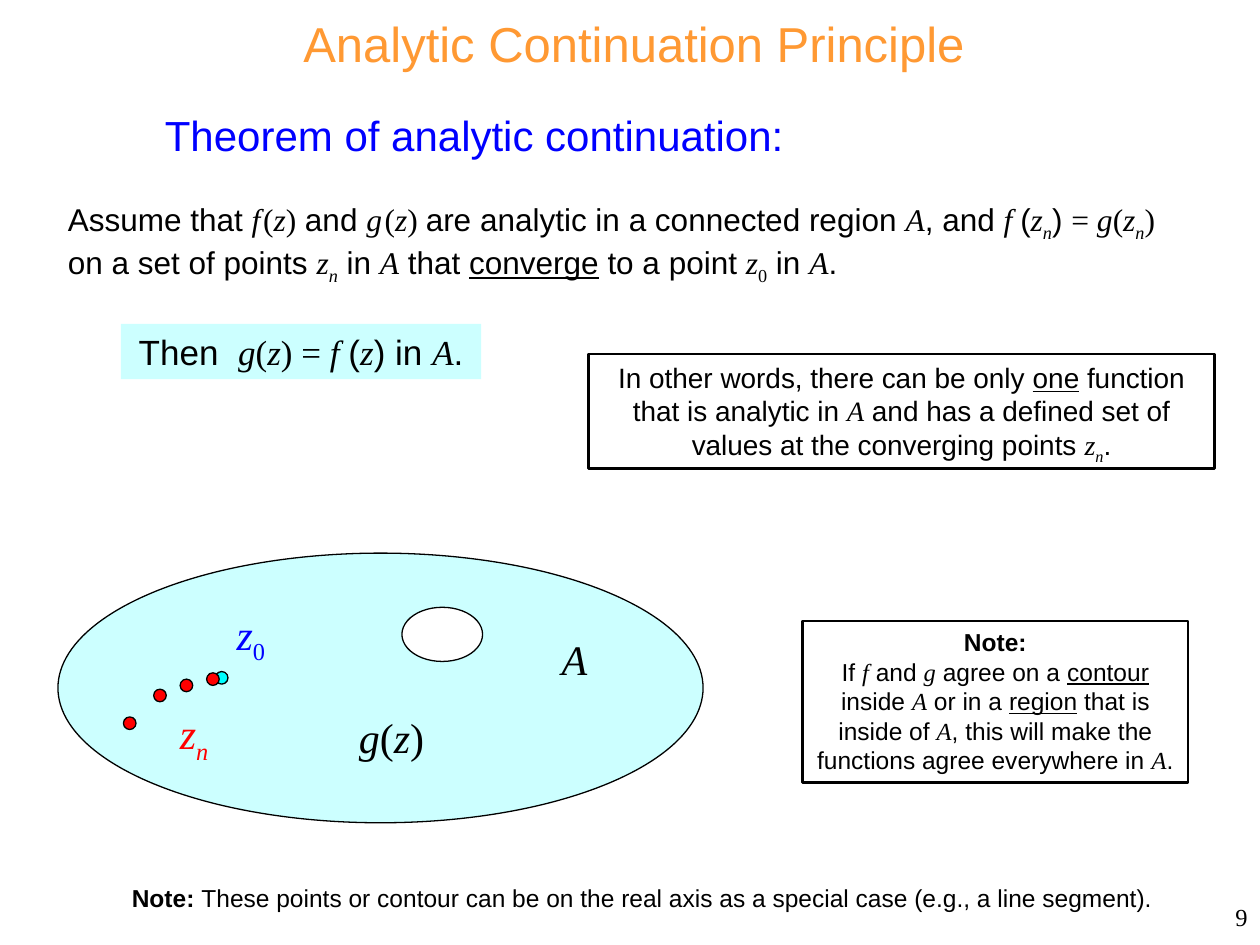
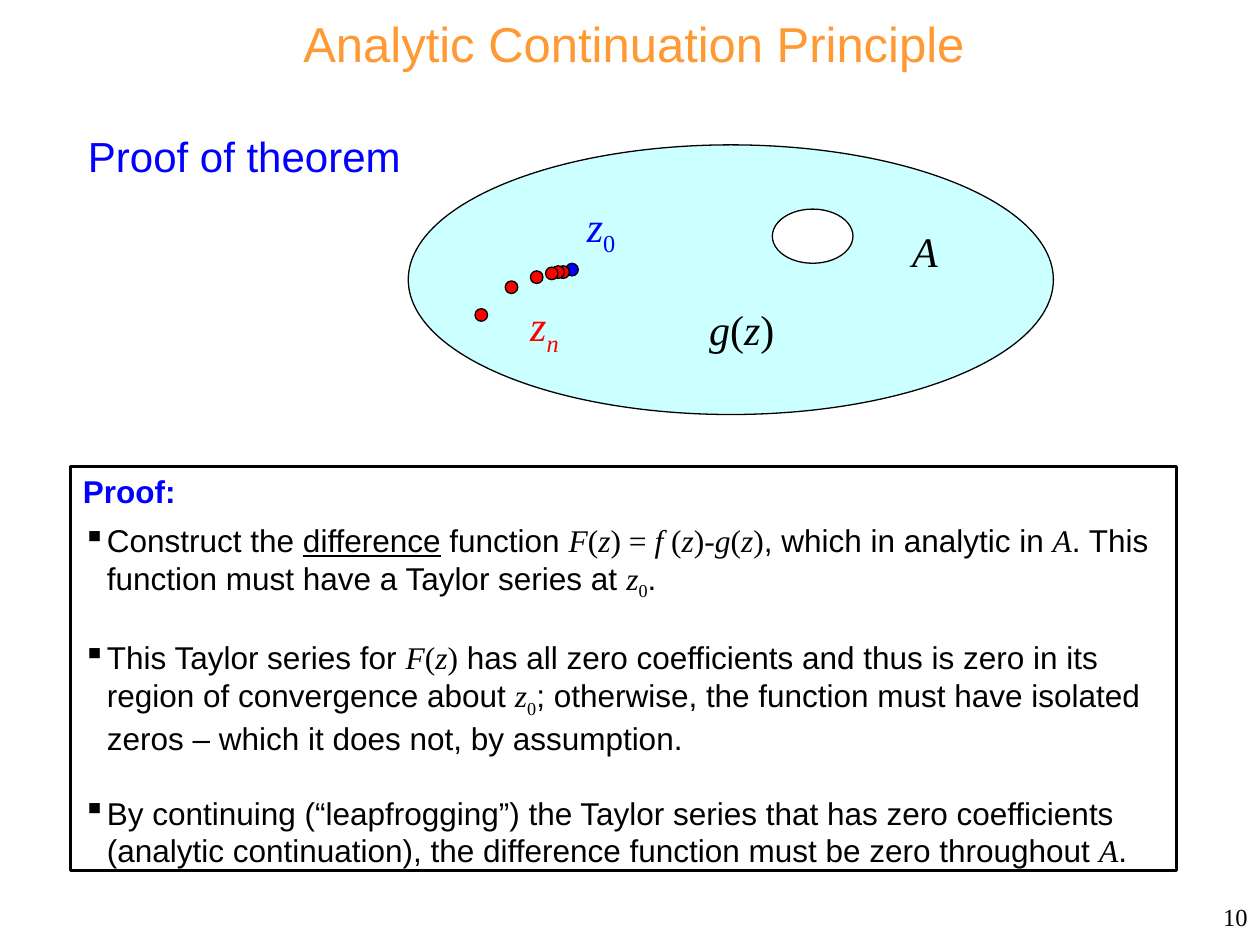
import itertools
import lxml.etree
import pptx
import pptx.dml.color
import pptx.enum.shapes
import pptx.enum.text
import pptx.oxml.ns
import pptx.util

CELL = pptx.util.Inches(0.1)
COLS, ROWS = 100, 75
SANS, SERIF = "Arial", "Times New Roman"
BLACK, WHITE, BLUE, RED = "000000", "FFFFFF", "0000FF", "FF0000"
PALE, CYAN, GOLD = "CCFFFF", "00FFFF", "FF9933"
MATH, UNDER, BOLD, THIN = "$~^`"
LEFT = pptx.enum.text.PP_ALIGN.LEFT
MID = pptx.enum.text.PP_ALIGN.CENTER
RIGHT = pptx.enum.text.PP_ALIGN.RIGHT
RECT = pptx.enum.shapes.MSO_SHAPE.RECTANGLE
OVAL = pptx.enum.shapes.MSO_SHAPE.OVAL


def rgb(code):
    """Turn a hex string into a colour."""
    return pptx.dml.color.RGBColor.from_string(code)


def grid(*spans):
    """Turn columns and rows of the slide grid into lengths."""
    return [round(span * CELL) for span in spans]


def parse(text):
    """Yield each shown character with its mode, subscript and thin flags."""
    mode, sub = "", False
    for char in text:
        if char in (MATH, UNDER, BOLD):
            mode = "" if mode == char else char
        elif mode == MATH and char == "_":
            sub = True
        else:
            thin = char == THIN
            slant = mode == MATH and char.isalpha()
            yield " " if thin else char, (mode, slant, sub, thin)
            sub = False


def write(para, text, size, color=BLACK, align=LEFT):
    """Fill a paragraph from text marked for math, underline and bold."""
    para.alignment = align
    for style, group in itertools.groupby(parse(text), lambda pair: pair[1]):
        mode, slant, sub, thin = style
        run = para.add_run()
        run.text = "".join(char for char, _ in group)
        font = run.font
        font.name = SERIF if mode == MATH else SANS
        font.size = pptx.util.Pt(6 if thin else size)
        font.color.rgb = rgb(color)
        font.italic, font.bold = slant, mode == BOLD
        font.underline = mode == UNDER
        if sub:
            font._element.set("baseline", "-25000")


def fill_text(shape, lines, size, color=BLACK, align=LEFT, wrap=True):
    """Write one paragraph per line, from the top of a shape."""
    frame = shape.text_frame
    frame.word_wrap = wrap
    frame.vertical_anchor = pptx.enum.text.MSO_ANCHOR.TOP
    for row, line in enumerate(lines):
        para = frame.add_paragraph() if row else frame.paragraphs[0]
        write(para, line, size, color, align)
    return frame


def add_text(shapes, place, text, size, color=BLACK, align=LEFT, wrap=False):
    """Add a text box with a single paragraph."""
    box = shapes.add_textbox(*grid(*place))
    fill_text(box, [text], size, color, align, wrap)


def add_form(shapes, kind, place, fill=None, line=None):
    """Add a flat preset shape with an optional fill and black line."""
    form = shapes.add_shape(kind, *grid(*place))
    form.shadow.inherit = False
    if fill:
        form.fill.solid()
        form.fill.fore_color.rgb = rgb(fill)
    else:
        form.fill.background()
    if line:
        form.line.color.rgb = rgb(BLACK)
        form.line.width = pptx.util.Pt(line)
    else:
        form.line.fill.background()
    return form


def add_box(slide, place, lines, size, fill=None, line=1.5):
    """Add a box of centred text."""
    box = add_form(slide.shapes, RECT, place, fill, line)
    fill_text(box, lines, size, align=MID)


def add_bullet(para):
    """Give a paragraph a square bullet and a hanging indent."""
    props = para._p.get_or_add_pPr()
    dent = pptx.util.Inches(0.19)
    props.set("marL", str(dent))
    props.set("indent", str(-dent))
    mark = lxml.etree.SubElement(props, pptx.oxml.ns.qn("a:buChar"))
    mark.set("char", "▪")


def add_region(slide, left, top, hole, dots, goal):
    """Draw region A with its hole, its limit point and its points."""
    shapes = slide.shapes.add_group_shape().shapes
    add_form(shapes, OVAL, (left, top, 51.2, 21.4), PALE, 0.75)
    add_form(shapes, OVAL, (left + hole[0], top + hole[1], 6.4, 4.3), WHITE, 0.75)
    points = [(12.5, 9.4, goal)] + [(col, row, RED) for col, row in dots]
    for col, row, color in points:
        add_form(shapes, OVAL, (left + col, top + row, 1, 1), color, 0.75)
    labels = [("$A$", 39, 5.9, 4, BLACK), ("$z_0$", 13.2, 3.9, 4.4, BLUE),
              ("$g(z)$", 22.9, 12.1, 7.2, BLACK), ("$z_n$", 8.7, 11.8, 4.4, RED)]
    for text, col, row, wide, color in labels:
        add_text(shapes, (left + col, top + row, wide, 5), text, 24, color)


def add_page(deck, number):
    """Add a slide with the shared title and its page number."""
    slide = deck.slides.add_slide(deck.slide_layouts[5])
    title = slide.shapes.title
    title.left, title.top, title.width, title.height = grid(14.9, 0, 70.8, 6.8)
    frame = title.text_frame
    frame.vertical_anchor = pptx.enum.text.MSO_ANCHOR.MIDDLE
    write(frame.paragraphs[0], "Analytic Continuation Principle", 28, GOLD, MID)
    add_text(slide.shapes, (COLS - 20.8, ROWS - 3.9, 20.8, 3.9),
             f"${number}$", 14, align=RIGHT, wrap=True)
    return slide


def add_claim(deck):
    """Build the slide that states the theorem."""
    slide = add_page(deck, 9)
    shapes = slide.shapes
    add_text(shapes, (12.1, 8.2, 52.8, 5.1),
             "Theorem of analytic continuation:", 24, BLUE)
    add_text(shapes, (4.4, 15.4, 89.9, 7.1),
             "Assume that $f`(z)$ and $g`(z) $are analytic in a connected region $A$, "
             "and $f $($z_n$) $= g(z_n)$ on a set of points $z_n$ in $A$ that "
             "~converge~ to a point $z_0$ in $A$.", 18, wrap=True)
    add_box(slide, (9.6, 25.7, 28.6, 4.4),
            ["Then  $g(z) = f $($z$) in $A$."], 20, PALE, None)
    add_box(slide, (46.7, 28.1, 49.7, 9.1),
            ["In other words, there can be only ~one~ function that is analytic in $A$ "
             "and has a defined set of values at the converging points $z_n$."], 16)
    add_region(slide, 4.6, 43.9, (27.3, 4.3),
               [(5.2, 13), (7.6, 10.8), (9.7, 10), (11.8, 9.5)], CYAN)
    add_box(slide, (63.7, 49.3, 30.6, 12.8),
            ["^Note:^",
             "If $f$ and $g$ agree on a ~contour~ inside $A$ or in a ~region~ that is "
             "inside of $A$, this will make the functions agree everywhere in $A$."], 14)
    add_text(shapes, (9.3, 69.6, 83.4, 3.4),
             "^Note: ^These points or contour can be on the real axis as a special case "
             "(e.g., a line segment).", 14, align=MID)


def add_proof(deck):
    """Build the slide that proves the theorem."""
    slide = add_page(deck, 10)
    add_text(slide.shapes, (6, 9.9, 28, 5), "Proof of theorem", 24, BLUE)
    add_region(slide, 32.4, 11.5, (28.9, 5.1),
               [(5.3, 13), (7.7, 10.8), (9.7, 10), (11.8, 9.6), (11.4, 9.6),
                (10.9, 9.7)], BLUE)
    box = add_form(slide.shapes, RECT, (5.6, 37, 87.8, 32.1), line=1.5)
    frame = fill_text(box, ["^Proof:^"], 18, BLUE)
    frame.paragraphs[0].space_after = pptx.util.Pt(6)
    steps = [
        "Construct the ~difference~ function $F(z) = f (z)-g(z)$, which in analytic in "
        "$A$. This function must have a Taylor series at $z_0$.",
        "This Taylor series for $F(z)$ has all zero coefficients and thus is zero in its "
        "region of convergence about $z_0$; otherwise, the function must have isolated "
        "zeros – which it does not, by assumption.",
        "By continuing (“leapfrogging”) the Taylor series that has zero coefficients "
        "(analytic continuation), the difference function must be zero throughout $A$."]
    for row, step in enumerate(steps):
        para = frame.add_paragraph()
        write(para, step, 18)
        para.space_before = pptx.util.Pt(21 if row else 0)
        add_bullet(para)


def main():
    """Build and save the deck."""
    deck = pptx.Presentation()
    deck.slide_width, deck.slide_height = grid(COLS, ROWS)
    add_claim(deck)
    add_proof(deck)
    deck.save("out.pptx")


if __name__ == "__main__":
    main()
